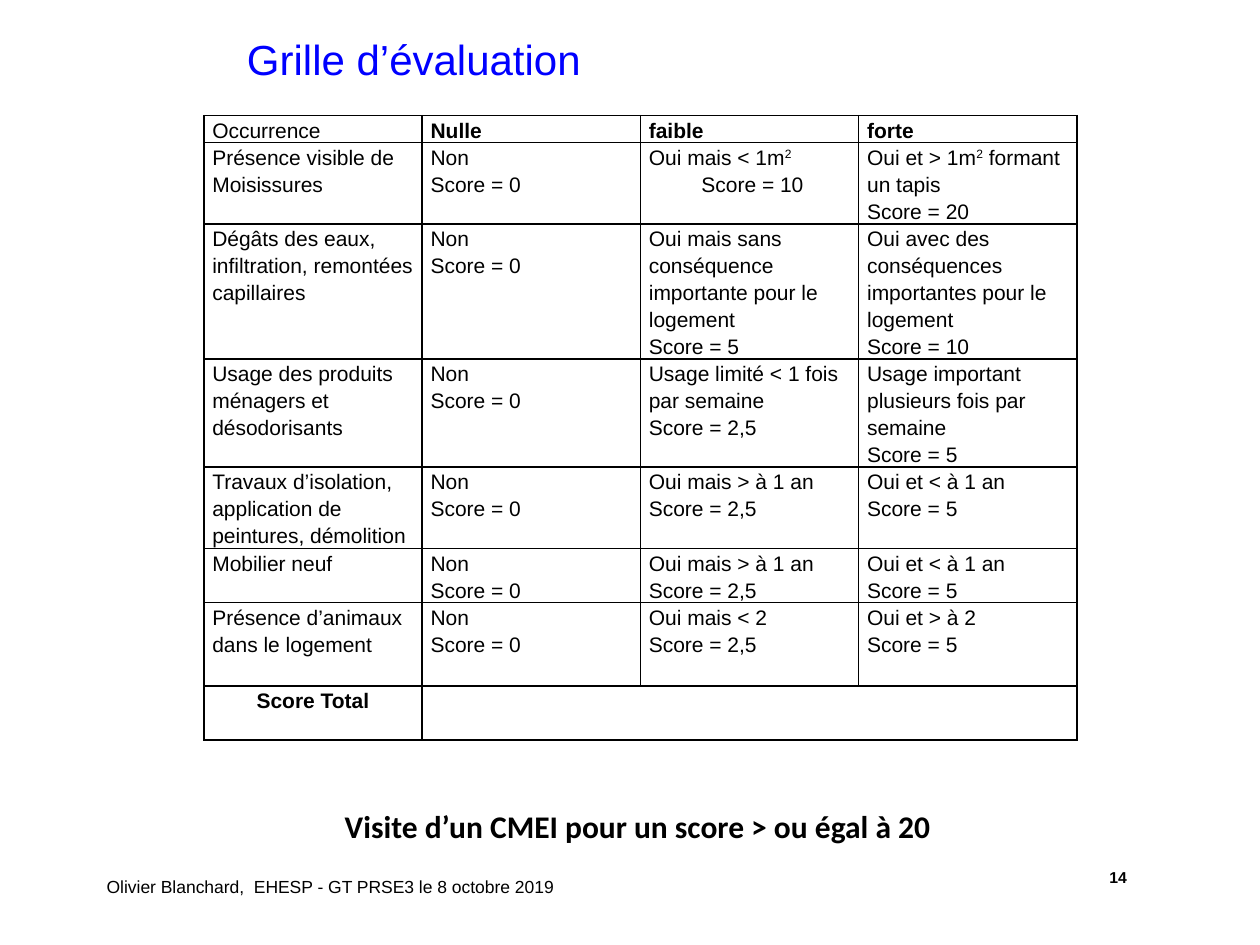
import dataclasses
import typing

import lxml.etree
import pptx
import pptx.dml.color
import pptx.enum.text
import pptx.oxml.ns
import pptx.util

Cm = pptx.util.Cm
Align = pptx.enum.text.PP_ALIGN
Anchor = pptx.enum.text.MSO_ANCHOR


@dataclasses.dataclass(frozen=True)
class Theme:
    black: str = "000000"
    blue: str = "0000FF"
    body_font: str = "Arial"
    accent_font: str = "Calibri"
    title_size: int = 24
    conclusion_size: int = 18
    table_size: int = 12
    footer_size: int = 10
    number_size: int = 9
    table_spacing: float = 1.15
    border_width: int = 1


THEME = Theme()


@dataclasses.dataclass(frozen=True)
class Label:
    text: str
    left: float
    top: float
    width: float
    height: float
    text_format: dict[str, typing.Any]
    anchor: Anchor = Anchor.TOP
    wrap: bool = True
    inset: tuple[float, float] = (0.25, 0.13)


class Criterion(typing.NamedTuple):
    name: str
    none: str
    low: str
    high: str
    height: float


LABELS = [
    Label("14", 21.8, 16.95, 1.48, 1.48,
          dict(size=THEME.number_size, bold=True, align=Align.CENTER), Anchor.MIDDLE),
    Label("Olivier Blanchard,  EHESP - GT PRSE3 le 8 octobre 2019", 1.9, 17.15, 18.85, 1.06,
          dict(size=THEME.footer_size), Anchor.BOTTOM),
    Label("Visite d’un CMEI pour un score > ou égal à 20", 6.7, 16.03, 12.42, 1.14,
          dict(size=THEME.conclusion_size, font=THEME.accent_font, bold=True,
               spacing=THEME.table_spacing), wrap=False),
    Label("Grille d’évaluation", 4.7, 0.53, 7.37, 1.32,
          dict(size=THEME.title_size, color=THEME.blue), wrap=False, inset=(0.28, 0.15)),
]

NO_SCORE = "Non\nScore = 0"
OLD = "Oui mais > à 1 an\nScore = 2,5"
RECENT = "Oui et < à 1 an\nScore = 5"
CRITERIA = [
    Criterion("Occurrence", "Nulle", "faible", "forte", 0.54),
    Criterion("Présence visible de Moisissures", NO_SCORE, "Oui mais < 1m^2^\nScore = 10",
              "Oui et > 1m^2^ formant un tapis\nScore = 20", 1.63),
    Criterion("Dégâts des eaux, infiltration, remontées capillaires", NO_SCORE,
              "Oui mais sans conséquence importante pour le logement\nScore = 5",
              "Oui avec des conséquences importantes pour le logement\nScore = 10", 2.72),
    Criterion("Usage des produits ménagers et désodorisants", NO_SCORE,
              "Usage limité < 1 fois par semaine\nScore = 2,5",
              "Usage important plusieurs fois par semaine\nScore = 5", 2.18),
    Criterion("Travaux d’isolation, application de peintures, démolition",
              NO_SCORE, OLD, RECENT, 1.63),
    Criterion("Mobilier neuf", NO_SCORE, OLD, RECENT, 1.09),
    Criterion("Présence d’animaux dans le logement", NO_SCORE,
              "Oui mais < 2\nScore = 2,5", "Oui et > à 2\nScore = 5", 1.68),
    Criterion("Score Total", "", "", "", 1.09),
]
TABLE_LEFT, TABLE_TOP, COLUMN_WIDTH = 4.11, 2.33, 4.4
CELL_INSET, SCORE_INDENT = 0.17, 1.06


def write_text(text_frame, text: str, *, size: int, font: str = THEME.body_font,
               color: str = THEME.black, bold: bool = False, align: Align = Align.LEFT,
               spacing: float = 1.0) -> None:
    for index, line in enumerate(text.split("\n")):
        paragraph = text_frame.paragraphs[0] if index == 0 else text_frame.add_paragraph()
        paragraph.alignment = align
        paragraph.line_spacing = spacing
        paragraph.font.size = pptx.util.Pt(size)
        for position, part in enumerate(line.split("^")):
            if not part:
                continue
            run = paragraph.add_run()
            run.text = part
            run.font.name = font
            run.font.size = pptx.util.Pt(size)
            run.font.bold = bold
            run.font.color.rgb = pptx.dml.color.RGBColor.from_string(color)
            if position % 2:
                run._r.get_or_add_rPr().set("baseline", "30000")


def add_label(slide, label: Label) -> None:
    shape = slide.shapes.add_textbox(
        Cm(label.left), Cm(label.top), Cm(label.width), Cm(label.height))
    text_frame = shape.text_frame
    text_frame.word_wrap = label.wrap
    text_frame.vertical_anchor = label.anchor
    text_frame.margin_left = text_frame.margin_right = Cm(label.inset[0])
    text_frame.margin_top = text_frame.margin_bottom = Cm(label.inset[1])
    write_text(text_frame, label.text, **label.text_format)


def set_borders(cell) -> None:
    properties = cell._tc.get_or_add_tcPr()
    qualified = pptx.oxml.ns.qn
    for side in ("a:lnL", "a:lnR", "a:lnT", "a:lnB"):
        line = lxml.etree.SubElement(properties, qualified(side),
                                     w=str(pptx.util.Pt(THEME.border_width)))
        fill = lxml.etree.SubElement(line, qualified("a:solidFill"))
        lxml.etree.SubElement(fill, qualified("a:srgbClr"), val=THEME.black)


def add_grid(slide, criteria: list[Criterion]) -> None:
    columns = 4
    frame = slide.shapes.add_table(
        len(criteria), columns, Cm(TABLE_LEFT), Cm(TABLE_TOP), Cm(columns * COLUMN_WIDTH),
        Cm(sum(criterion.height for criterion in criteria)))
    table = frame.table
    table.first_row = table.horz_banding = False
    for column in table.columns:
        column.width = Cm(COLUMN_WIDTH)
    last_row = len(criteria) - 1
    for row, criterion in enumerate(criteria):
        table.rows[row].height = Cm(criterion.height)
        for column, text in enumerate(criterion[:columns]):
            cell = table.cell(row, column)
            cell.margin_left = cell.margin_right = Cm(CELL_INSET)
            cell.margin_top = cell.margin_bottom = 0
            set_borders(cell)
            cell.fill.background()
            write_text(cell.text_frame, text, size=THEME.table_size,
                       bold=row == last_row or (row == 0 and column > 0),
                       align=Align.CENTER if row == last_row else Align.LEFT,
                       spacing=THEME.table_spacing)
    table.cell(last_row, 1).merge(table.cell(last_row, columns - 1))
    indented = table.cell(1, 2).text_frame.paragraphs[1]
    indented._p.get_or_add_pPr().set("marL", str(Cm(SCORE_INDENT)))


def main() -> None:
    """Build the evaluation grid slide."""
    presentation = pptx.Presentation()
    presentation.slide_width = Cm(25.4)
    presentation.slide_height = Cm(19.05)
    slide = presentation.slides.add_slide(presentation.slide_layouts[6])
    add_grid(slide, CRITERIA)
    for label in LABELS:
        add_label(slide, label)
    presentation.save("out.pptx")


if __name__ == "__main__":
    main()
